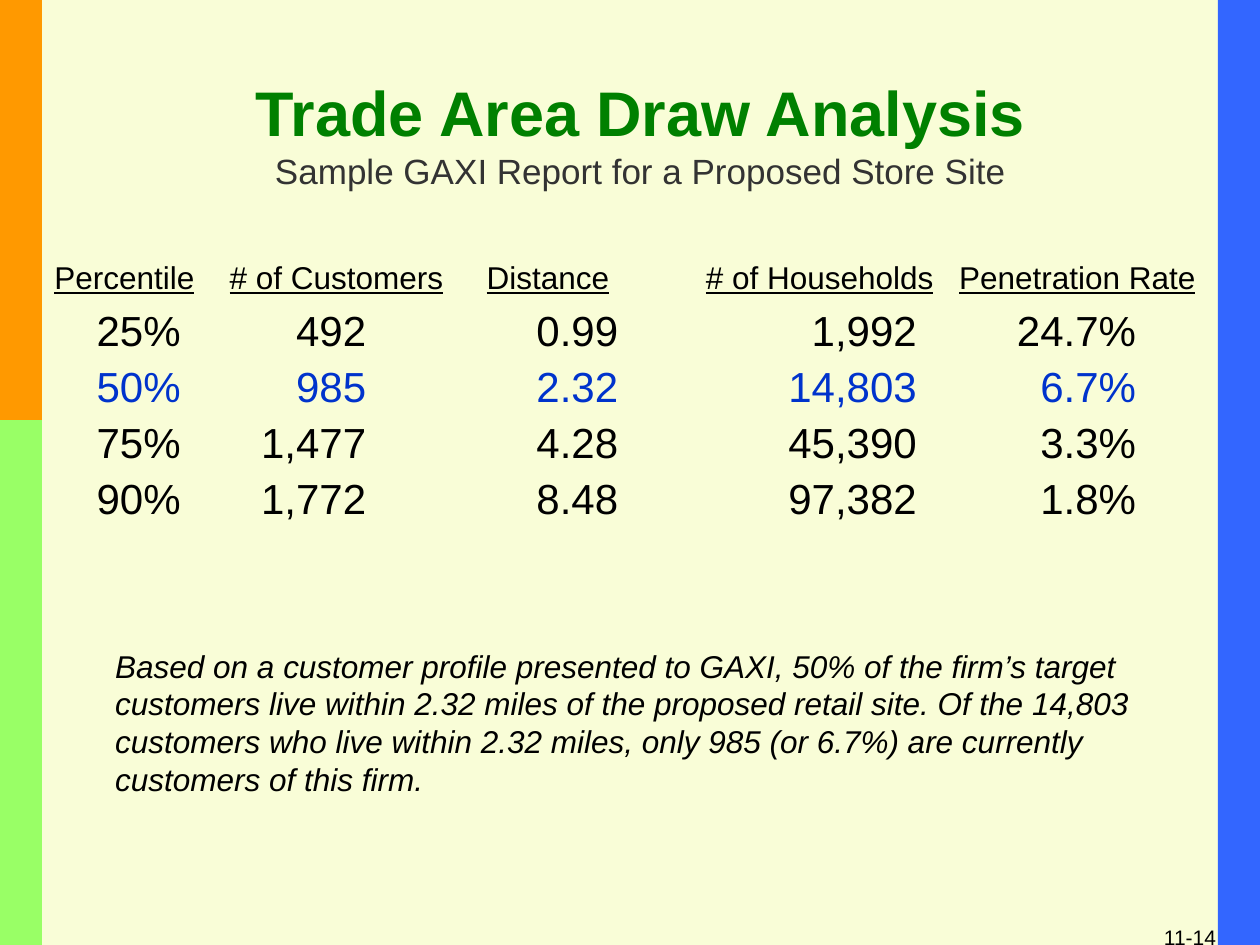
from lxml import etree
from pptx import Presentation, util as u
from pptx.dml.color import RGBColor
from pptx.enum import shapes, text
from pptx.oxml.ns import qn

CREAM = RGBColor(0xF9, 0xFD, 0xD7)
BLACK = RGBColor(0x00, 0x00, 0x00)
GREEN = RGBColor(0x00, 0x80, 0x00)
GRAY = RGBColor(0x33, 0x33, 0x33)
NAVY = RGBColor(0x00, 0x33, 0xCC)
BLUE = RGBColor(0x33, 0x66, 0xFF)
ORANGE = RGBColor(0xFF, 0x99, 0x00)
LIME = RGBColor(0x99, 0xFF, 0x66)

COLUMNS, ROWS = 120, 90
HEADERS = ["Percentile", "# of Customers", "Distance", "# of Households", "Penetration Rate"]
HEADER_TABS = [1.39, 3.43, 5.17, 7.18]
DATA = [
    ["25%", "492", "0.99", "1,992", "24.7%"],
    ["50%", "985", "2.32", "14,803", "6.7%"],
    ["75%", "1,477", "4.28", "45,390", "3.3%"],
    ["90%", "1,772", "8.48", "97,382", "1.8%"],
]
DATA_TABS = [2.14, 4.14, 6.51, 8.25]
NOTE = (
    "Based on a customer profile presented to GAXI, 50% of the firm’s target "
    "customers live within 2.32 miles of the proposed retail site. Of the 14,803 "
    "customers who live within 2.32 miles, only 985 (or 6.7%) are currently "
    "customers of this firm."
)


def add_run(p, words, size=18, color=BLACK, bold=False, italic=False, underline=False):
    r = p.add_run()
    r.text = words
    f = r.font
    f.name, f.size, f.color.rgb = "Arial", u.Pt(size), color
    f.bold, f.italic, f.underline = bold, italic, underline


def set_tabs(p, stops, align):
    tabs = etree.SubElement(p._p.get_or_add_pPr(), qn("a:tabLst"))
    for stop in stops:
        etree.SubElement(tabs, qn("a:tab"), pos=str(u.Inches(stop)), algn=align)


class Deck:
    def __init__(self):
        self.prs = Presentation()
        self.prs.slide_width, self.prs.slide_height = u.Inches(10), u.Inches(7.5)
        self.s = self.prs.slides.add_slide(self.prs.slide_layouts[5])
        self.s.background.fill.solid()
        self.s.background.fill.fore_color.rgb = CREAM

    def box(self, col, row, cols, rows):
        w, h = self.prs.slide_width / COLUMNS, self.prs.slide_height / ROWS
        return [round(n) for n in (col * w, row * h, cols * w, rows * h)]

    def title(self, cell, heading, subtitle):
        sp = self.s.shapes.title
        sp.left, sp.top, sp.width, sp.height = self.box(*cell)
        tf = sp.text_frame
        tf.auto_size = text.MSO_AUTO_SIZE.NONE
        tf.vertical_anchor = text.MSO_ANCHOR.BOTTOM
        p = tf.paragraphs[0]
        p.alignment = text.PP_ALIGN.CENTER
        add_run(p, heading, size=36, color=GREEN, bold=True)
        p.add_line_break()
        add_run(p, subtitle, size=20, color=GRAY)

    def text(self, cell, words="", align=text.PP_ALIGN.LEFT,
             anchor=text.MSO_ANCHOR.TOP, **style):
        tf = self.s.shapes.add_textbox(*self.box(*cell)).text_frame
        tf.word_wrap = True
        tf.vertical_anchor = anchor
        p = tf.paragraphs[0]
        p.alignment = align
        if words:
            add_run(p, words, **style)
        return tf

    def data_rows(self, cell, rows, stops, highlight):
        tf = self.text(cell)
        tf.margin_left = u.Inches(0.6)
        for i, row in enumerate(rows):
            p = tf.add_paragraph() if i else tf.paragraphs[0]
            p.line_spacing, p.space_before = 0.9, u.Pt(6)
            set_tabs(p, stops, "r")
            add_run(p, "\t".join(row), size=24, color=NAVY if i == highlight else BLACK)

    def bar(self, cell, color):
        sp = self.s.shapes.add_shape(shapes.MSO_SHAPE.RECTANGLE, *self.box(*cell))
        sp.shadow.inherit = False
        sp.fill.solid()
        sp.fill.fore_color.rgb = color
        sp.line.fill.background()


def main():
    d = Deck()
    d.text((92, 85, 25, 6), "11-14", align=text.PP_ALIGN.RIGHT,
           anchor=text.MSO_ANCHOR.BOTTOM, size=12)
    d.title((5, 6.4, 112, 12.4), "Trade Area Draw Analysis",
            "Sample GAXI Report for a Proposed Store Site")
    d.data_rows((2, 29, 112, 27), DATA, DATA_TABS, highlight=1)
    header = d.text((4, 24, 112, 4.8), "\t".join(HEADERS), underline=True)
    set_tabs(header.paragraphs[0], HEADER_TABS, "l")
    d.text((9.8, 61, 104.2, 15.6), NOTE, italic=True)
    d.bar((116, 0, 4, 90), BLUE)
    d.bar((0, 0, 4, 40), ORANGE)
    d.bar((0, 40, 4, 50), LIME)
    d.prs.save("out.pptx")


if __name__ == "__main__":
    main()
